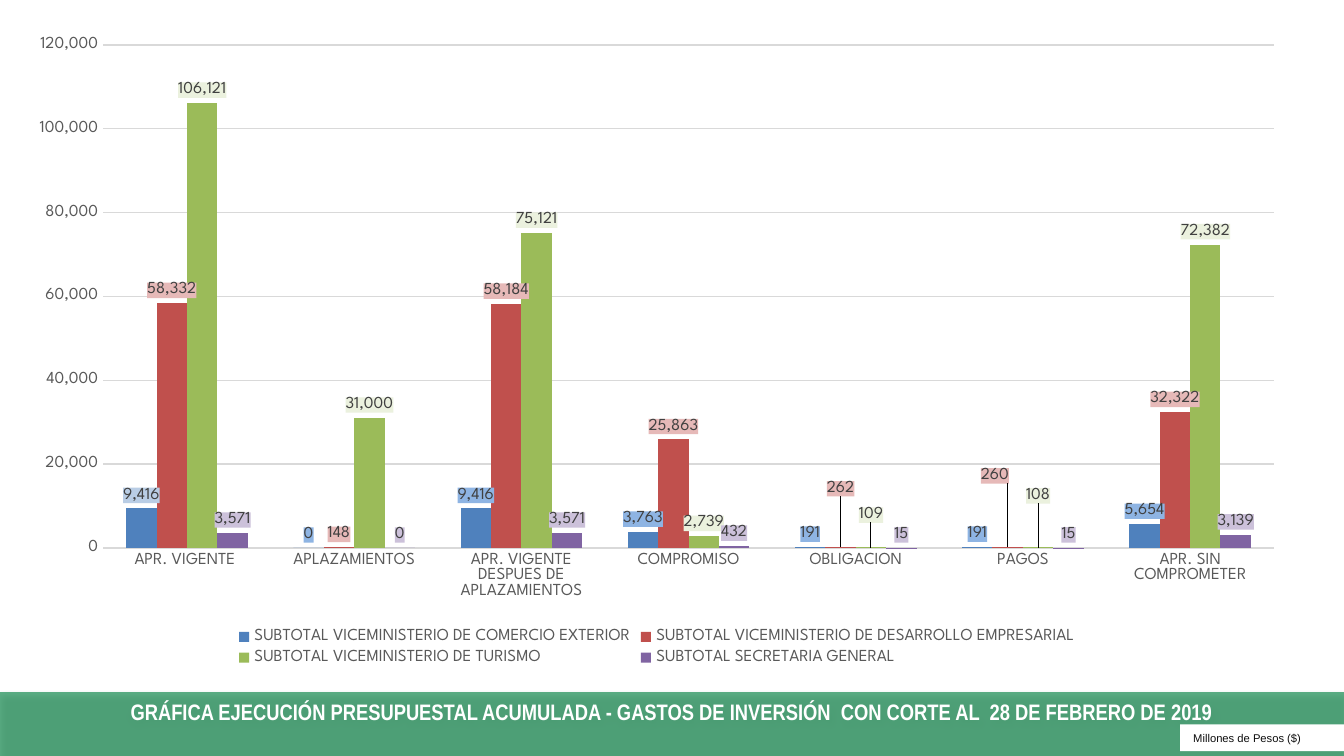
from copy import deepcopy
from dataclasses import dataclass, field

from lxml import etree
from pptx import Presentation
from pptx.chart.data import CategoryChartData
from pptx.dml.color import RGBColor
from pptx.enum.chart import XL_CHART_TYPE, XL_LABEL_POSITION, XL_LEGEND_POSITION, XL_TICK_MARK
from pptx.enum.shapes import MSO_SHAPE
from pptx.enum.text import MSO_ANCHOR, PP_ALIGN
from pptx.oxml import parse_xml
from pptx.oxml.ns import nsdecls, qn
from pptx.util import Inches, Pt

CLUSTERED = XL_CHART_TYPE.COLUMN_CLUSTERED
OUTSIDE_END = XL_LABEL_POSITION.OUTSIDE_END
LEGEND_BOTTOM = XL_LEGEND_POSITION.BOTTOM
NO_TICK = XL_TICK_MARK.NONE
RECTANGLE = MSO_SHAPE.RECTANGLE
MIDDLE = MSO_ANCHOR.MIDDLE
LEFT, CENTER = PP_ALIGN.LEFT, PP_ALIGN.CENTER

WHITE = RGBColor(0xFF, 0xFF, 0xFF)
BLACK = RGBColor(0x00, 0x00, 0x00)
GREEN = RGBColor(0x33, 0x99, 0x66)
NOTE_INK = RGBColor(0x0D, 0x0D, 0x0D)
AXIS_INK = RGBColor(0x59, 0x59, 0x59)
LABEL_INK = RGBColor(0x40, 0x40, 0x40)
GRID = RGBColor(0xD9, 0xD9, 0xD9)
PALE_BLUE = RGBColor(0xB9, 0xCD, 0xE5)
CHART_FONT = "League Spartan"
NUMBER_FORMAT = "#,##0"
C15 = "http://schemas.microsoft.com/office/drawing/2012/chart"


@dataclass
class Subtotal:
    name: str
    values: tuple[int, ...]
    color: RGBColor
    label_fill: RGBColor
    label_shifts: dict[int, tuple[float, float]] = field(default_factory=dict)


STAGES = ("APR. VIGENTE ", "APLAZAMIENTOS", "APR. VIGENTE DESPUES DE APLAZAMIENTOS",
          "COMPROMISO", "OBLIGACION", "PAGOS", "APR. SIN COMPROMETER")
SUBTOTALS = (
    Subtotal("SUBTOTAL VICEMINISTERIO DE COMERCIO EXTERIOR",
             (9416, 0, 9416, 3763, 191, 191, 5654),
             RGBColor(0x4F, 0x81, 0xBD), RGBColor(0x8E, 0xB4, 0xE3)),
    Subtotal("SUBTOTAL VICEMINISTERIO DE DESARROLLO EMPRESARIAL",
             (58332, 148, 58184, 25863, 262, 260, 32322),
             RGBColor(0xC0, 0x50, 0x4D), RGBColor(0xE6, 0xB9, 0xB8),
             {4: (0, -0.07), 5: (-0.01, -0.09)}),
    Subtotal("SUBTOTAL VICEMINISTERIO DE TURISMO",
             (106121, 31000, 75121, 2739, 109, 108, 72382),
             RGBColor(0x9B, 0xBB, 0x59), RGBColor(0xEB, 0xF1, 0xDE),
             {4: (0, -0.03), 5: (0, -0.06)}),
    Subtotal("SUBTOTAL SECRETARIA GENERAL ",
             (3571, 0, 3571, 432, 15, 15, 3139),
             RGBColor(0x80, 0x64, 0xA2), RGBColor(0xCC, 0xC1, 0xDA)),
)


def style_font(font, name: str, size: float, color: RGBColor, bold: bool = False) -> None:
    font.name, font.size, font.bold = name, Pt(size), bold
    font.color.rgb = color


def add_panel(slide, left: float, top: float, width: float, height: float, fill: RGBColor):
    panel = slide.shapes.add_shape(RECTANGLE, Inches(left), Inches(top),
                                   Inches(width), Inches(height))
    panel.shadow.inherit = False
    panel.fill.solid()
    panel.fill.fore_color.rgb = fill
    panel.line.fill.background()
    panel.text_frame.word_wrap = True
    panel.text_frame.vertical_anchor = MIDDLE
    return panel


def write(panel, text: str, align, font: str, size: float, color: RGBColor,
          bold: bool = False) -> None:
    paragraph = panel.text_frame.paragraphs[0]
    paragraph.alignment = align
    run = paragraph.add_run()
    run.text = text
    style_font(run.font, font, size, color, bold)


def soften_banner(banner) -> None:
    """Make the fill 80% opaque and add a soft shadow below."""
    properties = banner.fill._xPr
    color = properties.find(qn("a:solidFill"))[0]
    etree.SubElement(color, qn("a:alpha")).set("val", "80000")
    properties.find(qn("a:effectLst")).append(parse_xml(
        f'<a:outerShdw {nsdecls("a")} blurRad="{Pt(3.1)}" dist="{Pt(1.8)}" dir="5400000" '
        'rotWithShape="0"><a:srgbClr val="000000"><a:alpha val="35000"/></a:srgbClr>'
        '</a:outerShdw>'))


def manual_layout(**parts: float | str):
    items = "".join(f'<c:{tag} val="{value}"/>' for tag, value in parts.items())
    return parse_xml(f'<c:layout {nsdecls("c")}><c:manualLayout>{items}'
                     '</c:manualLayout></c:layout>')


def label_background(color: RGBColor):
    return parse_xml(f'<c:spPr {nsdecls("c", "a")}><a:solidFill><a:srgbClr val="{color}"/>'
                     '</a:solidFill><a:ln><a:noFill/></a:ln></c:spPr>')


def point_label(shared: list, index: int, shift: tuple[float, float], fill: RGBColor):
    """Build one label that shares the series settings but has its own place and fill."""
    label = parse_xml(f'<c:dLbl {nsdecls("c")}><c:idx val="{index}"/></c:dLbl>')
    label.append(manual_layout(x=shift[0], y=shift[1]))
    for part in shared:
        label.append(label_background(fill) if part.tag == qn("c:spPr") else deepcopy(part))
    return label


def hide_leader_lines(labels_element) -> None:
    for setting in labels_element.findall(qn("c:showLeaderLines")):
        labels_element.remove(setting)
    labels_element.append(parse_xml(
        f'<c:extLst {nsdecls("c")}><c:ext uri="{{CE6537A1-D6FC-4f65-9D91-7224C49458BB}}" '
        f'xmlns:c15="{C15}"><c15:showLeaderLines val="0"/></c:ext></c:extLst>'))


def style_series(series, subtotal: Subtotal) -> None:
    series.format.fill.solid()
    series.format.fill.fore_color.rgb = subtotal.color
    series.invert_if_negative = False
    labels = series.data_labels
    labels.show_value = True
    labels.number_format = NUMBER_FORMAT
    labels.number_format_is_linked = False
    labels.position = OUTSIDE_END
    style_font(labels.font, CHART_FONT, 9, LABEL_INK)

    element = labels._element
    element.find(qn("c:txPr")).addprevious(label_background(subtotal.label_fill))
    shared = [part for part in element if part.tag != qn("c:showLeaderLines")]
    own_labels = [point_label(shared, index, shift, subtotal.label_fill)
                  for index, shift in subtotal.label_shifts.items()]
    if subtotal is SUBTOTALS[0]:
        own_labels.append(point_label(shared, 0, (0, 0), PALE_BLUE))
    for position, label in enumerate(own_labels):
        element.insert(position, label)
    hide_leader_lines(element)


def add_budget_chart(slide) -> None:
    data = CategoryChartData(number_format=NUMBER_FORMAT)
    data.categories = STAGES
    for subtotal in SUBTOTALS:
        data.add_series(subtotal.name, subtotal.values)
    chart = slide.shapes.add_chart(CLUSTERED, Inches(0.1), Inches(0.19),
                                   Inches(9.57), Inches(4.8), data).chart
    chart.has_title = False
    style_font(chart.font, CHART_FONT, 10, BLACK)
    chart.has_legend = True
    chart.legend.position = LEGEND_BOTTOM
    chart.legend.include_in_layout = False
    style_font(chart.legend.font, CHART_FONT, 9, AXIS_INK)

    for axis in (chart.category_axis, chart.value_axis):
        axis.major_tick_mark = axis.minor_tick_mark = NO_TICK
        axis.format.line.fill.background()
        style_font(axis.tick_labels.font, CHART_FONT, 9, AXIS_INK)
    amounts = chart.value_axis
    amounts.minimum_scale, amounts.maximum_scale, amounts.major_unit = 0, 120000, 20000
    amounts.tick_labels.number_format = NUMBER_FORMAT
    amounts.tick_labels.number_format_is_linked = False
    amounts.major_gridlines.format.line.color.rgb = GRID
    amounts.major_gridlines.format.line.width = Pt(0.75)

    plot = chart.plots[0]
    plot.gap_width, plot.overlap, plot.vary_by_categories = 150, 0, False
    for series, subtotal in zip(plot.series, SUBTOTALS):
        style_series(series, subtotal)

    plot_area = chart._chartSpace.chart.plotArea
    for layout in plot_area.findall(qn("c:layout")):
        plot_area.remove(layout)
    plot_area.insert(0, manual_layout(layoutTarget="inner", xMode="edge", yMode="edge",
                                      x=0.07, y=0.03, w=0.91, h=0.78))


def main() -> None:
    deck = Presentation()
    deck.slide_width = Inches(10)
    deck.slide_height = deck.slide_width * 9 // 16
    slide = deck.slides.add_slide(deck.slide_layouts[6])

    banner = add_panel(slide, 0, 5.15, 10, 0.48, GREEN)
    soften_banner(banner)
    banner.text_frame.margin_bottom = Inches(0.24)
    write(banner, "GRÁFICA EJECUCIÓN PRESUPUESTAL ACUMULADA - GASTOS DE INVERSIÓN  "
          "CON CORTE AL  28 DE FEBRERO DE 2019", CENTER, "Arial Narrow", 12, WHITE, True)
    units = add_panel(slide, 8.78, 5.39, 1.22, 0.2, WHITE)
    write(units, "Millones de Pesos ($)", LEFT, "Arial", 6, NOTE_INK)
    add_budget_chart(slide)
    deck.save("out.pptx")


if __name__ == "__main__":
    main()
